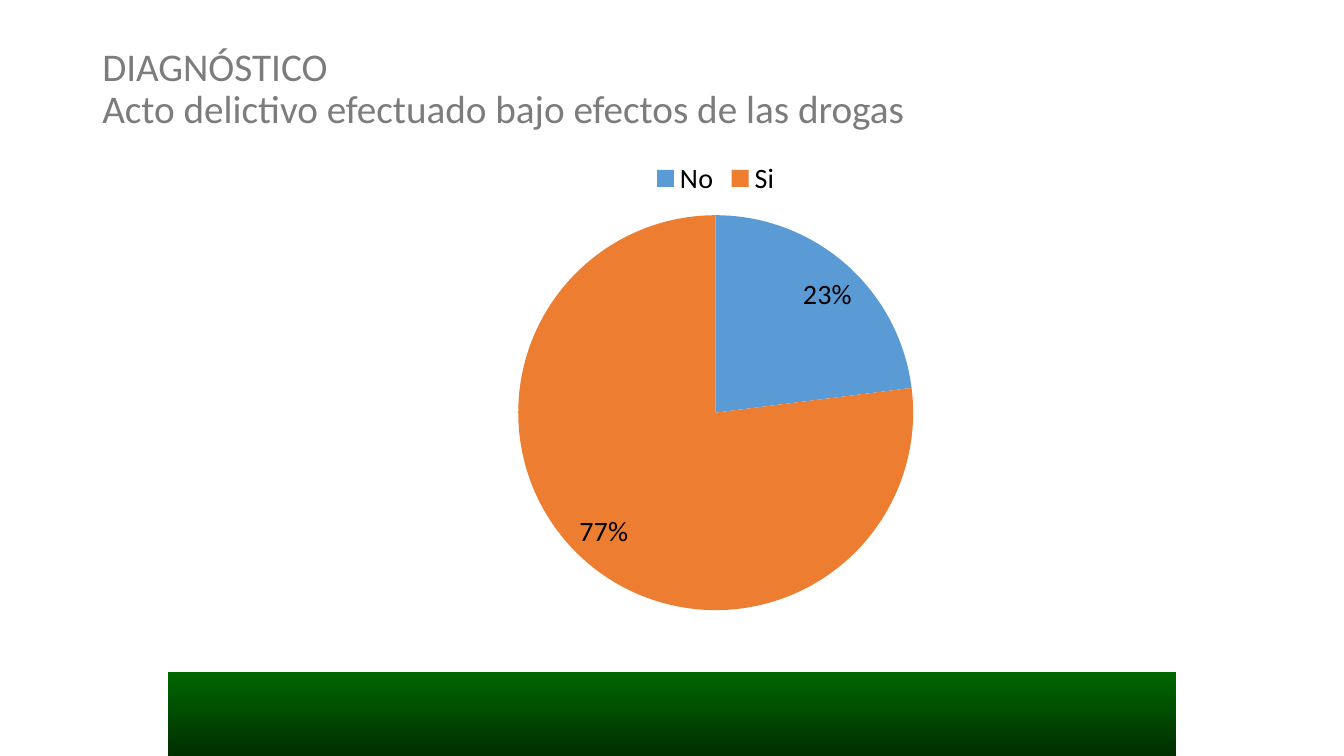
from pptx import Presentation
from pptx.chart.data import CategoryChartData
from pptx.dml.color import RGBColor
from pptx.enum.chart import XL_CHART_TYPE, XL_LABEL_POSITION, XL_LEGEND_POSITION
from pptx.enum.shapes import MSO_SHAPE
from pptx.enum.text import MSO_ANCHOR
from pptx.util import Pt

PIE = XL_CHART_TYPE.PIE
BEST_FIT = XL_LABEL_POSITION.BEST_FIT
LEGEND_TOP = XL_LEGEND_POSITION.TOP
RECTANGLE = MSO_SHAPE.RECTANGLE
ANCHOR_TOP = MSO_ANCHOR.TOP

# Content
TITLE = "DIAGNÓSTICO\vActo delictivo efectuado bajo efectos de las drogas"
SERIES_NAME = "Series 1"
ANSWERS = [("No", 23, "no"), ("Si", 77, "yes")]
FONT = "Calibri"
COLORS = {
    "title": "7C7C7C",
    "text": "000000",
    "no": "5B9BD5",
    "yes": "ED7D31",
    "band_top": "006600",
    "band_bottom": "002F00",
}

# Layout in points
SLIDE_WIDTH, SLIDE_HEIGHT = 960, 540
TITLE_BOX = (66, 28.8, 828, 104.4)
CHART_BOX = (242, 105.8, 538.5, 340)
BAND_WIDTH, BAND_HEIGHT = 720, 60
BAND_BOX = ((SLIDE_WIDTH - BAND_WIDTH) / 2, SLIDE_HEIGHT - BAND_HEIGHT,
            BAND_WIDTH, BAND_HEIGHT)


def points(box):
    return [Pt(length) for length in box]


def color(name):
    return RGBColor.from_string(COLORS[name])


def style_font(font, size, color_name):
    font.name = FONT
    font.size = Pt(size)
    font.color.rgb = color(color_name)


def add_title(slide):
    frame = slide.shapes.add_textbox(*points(TITLE_BOX)).text_frame
    frame.word_wrap = True
    frame.vertical_anchor = ANCHOR_TOP
    frame.margin_top = Pt(5.2)
    paragraph = frame.paragraphs[0]
    paragraph.text = TITLE
    paragraph.line_spacing = 0.9
    style_font(paragraph.font, 28, "title")


def add_band(slide):
    band = slide.shapes.add_shape(RECTANGLE, *points(BAND_BOX))
    band.shadow.inherit = False
    band.line.fill.background()
    band.fill.gradient()
    band.fill.gradient_angle = 270
    for stop, name in zip(band.fill.gradient_stops, ("band_top", "band_bottom")):
        stop.color.rgb = color(name)


def add_pie(slide):
    data = CategoryChartData()
    data.categories = [answer for answer, _, _ in ANSWERS]
    data.add_series(SERIES_NAME, [share for _, share, _ in ANSWERS])
    chart = slide.shapes.add_chart(PIE, *points(CHART_BOX), data).chart
    chart.has_title = False
    style_font(chart.font, 10, "text")

    # Legend
    chart.has_legend = True
    chart.legend.position = LEGEND_TOP
    chart.legend.include_in_layout = False
    style_font(chart.legend.font, 20, "text")

    # Slices and percentages
    plot = chart.plots[0]
    plot.vary_by_categories = True
    for index, (_, _, name) in enumerate(ANSWERS):
        fill = plot.series[0].points[index].format.fill
        fill.solid()
        fill.fore_color.rgb = color(name)
    labels = plot.series[0].data_labels
    labels.show_value = False
    labels.show_percentage = True
    labels.number_format = "0%"
    labels.number_format_is_linked = False
    labels.position = BEST_FIT
    style_font(labels.font, 20, "text")


def main():
    presentation = Presentation()
    presentation.slide_width = Pt(SLIDE_WIDTH)
    presentation.slide_height = Pt(SLIDE_HEIGHT)
    slide = presentation.slides.add_slide(presentation.slide_layouts[6])
    add_title(slide)
    add_band(slide)
    add_pie(slide)
    presentation.save("out.pptx")


if __name__ == "__main__":
    main()
